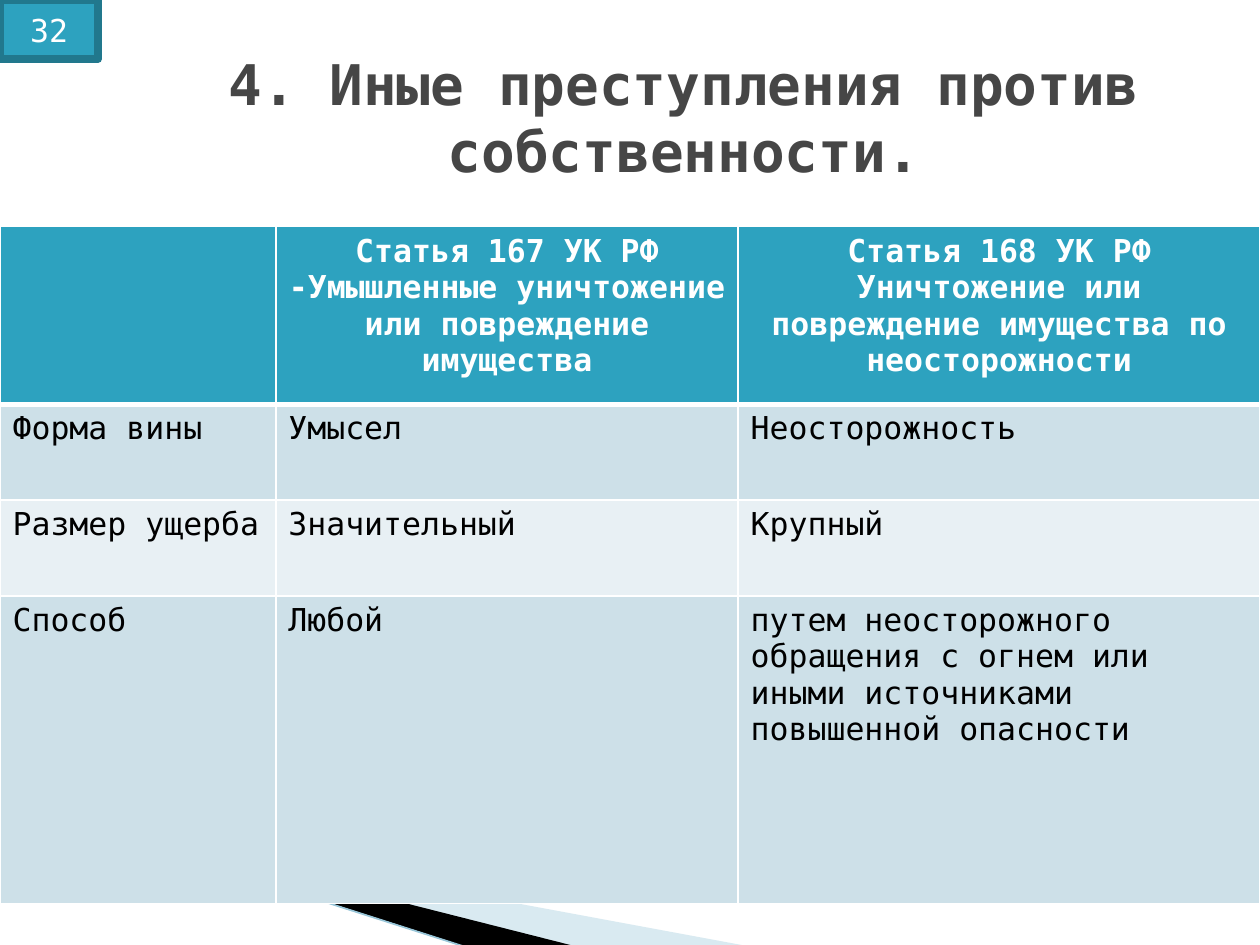
from dataclasses import dataclass

from lxml.etree import SubElement
from pptx import Presentation
from pptx.dml.color import RGBColor
from pptx.enum.shapes import MSO_CONNECTOR, MSO_SHAPE
from pptx.enum.text import MSO_ANCHOR, PP_ALIGN
from pptx.oxml.ns import qn
from pptx.util import Cm, Pt

FONT_NAME = "DejaVu Sans Mono"
WHITE = RGBColor(0xFF, 0xFF, 0xFF)
BLACK = RGBColor(0x00, 0x00, 0x00)
TEAL = RGBColor(0x2D, 0xA2, 0xBF)
DARK_TEAL = RGBColor(0x21, 0x78, 0x8D)
PALE_BLUE = RGBColor(0xA0, 0xCB, 0xDC)
LINE_BLUE = RGBColor(0x97, 0xC5, 0xD8)
TITLE_GREY = RGBColor(0x46, 0x46, 0x46)
BAND_DARK = RGBColor(0xCD, 0xE0, 0xE8)
BAND_LIGHT = RGBColor(0xE8, 0xF0, 0xF4)

COLUMN_WIDTHS = (5.56, 9.32, 10.52)
ROW_HEIGHTS = (3.58, 1.93, 1.93, 6.2)
ROWS = (
    ("",
     "Статья 167 УК РФ -Умышленные уничтожение или повреждение имущества",
     "Статья 168 УК РФ Уничтожение или повреждение имущества по неосторожности"),
    ("Форма вины", "Умысел", "Неосторожность"),
    ("Размер ущерба", "Значительный", "Крупный"),
    ("Способ", "Любой",
     "путем неосторожного обращения с огнем или иными источниками повышенной опасности"),
)


@dataclass(frozen=True)
class TextStyle:
    size: float
    color: RGBColor
    bold: bool = False
    alignment: PP_ALIGN = PP_ALIGN.CENTER


@dataclass(frozen=True)
class Wedge:
    points: tuple[tuple[float, float], ...]
    color: RGBColor
    opacity: int = 100


TITLE_STYLE = TextStyle(32, TITLE_GREY, True)
NUMBER_STYLE = TextStyle(18, WHITE)
HEADER_STYLE = TextStyle(18, WHITE, True)
BODY_STYLE = TextStyle(18, BLACK, alignment=PP_ALIGN.LEFT)

WEDGES = (
    Wedge(((1.4, 16.54), (15.11, 19.08), (11.58, 19.08), (1.4, 16.51)), PALE_BLUE, 40),
    Wedge(((1.35, 16.48), (11.61, 19.08), (9.45, 19.1), (1.37, 16.51)), BLACK),
)


def write_text(text_frame, text: str, style: TextStyle) -> None:
    paragraph = text_frame.paragraphs[0]
    paragraph.alignment = style.alignment
    run = paragraph.add_run()
    run.text = text
    run.font.name = FONT_NAME
    run.font.size = Pt(style.size)
    run.font.bold = style.bold
    run.font.color.rgb = style.color


def draw_wedge(slide, wedge: Wedge) -> None:
    first, *others = [(Cm(x), Cm(y)) for x, y in wedge.points]
    builder = slide.shapes.build_freeform(*first)
    builder.add_line_segments(others, close=True)
    shape = builder.convert_to_shape()
    shape.shadow.inherit = False
    shape.fill.solid()
    shape.fill.fore_color.rgb = wedge.color
    shape.line.fill.background()
    if wedge.opacity < 100:
        color = shape._element.spPr.find(qn("a:solidFill"))[0]
        SubElement(color, qn("a:alpha"), val=str(wedge.opacity * 1000))


def draw_edge_line(slide) -> None:
    connector = slide.shapes.add_connector(
        MSO_CONNECTOR.STRAIGHT, Cm(-0.03), Cm(16.08), Cm(9.42), Cm(19.1))
    connector.line.color.rgb = LINE_BLUE
    connector.line.width = Pt(0.95)
    SubElement(connector._element.spPr, qn("a:effectLst"))


def set_borders(cell, bottom_width: float) -> None:
    properties = cell._tc.get_or_add_tcPr()
    widths = {"lnL": 1, "lnR": 1, "lnT": 1, "lnB": bottom_width}
    for side, width in widths.items():
        line = SubElement(properties, qn(f"a:{side}"), w=str(Pt(width)))
        fill = SubElement(line, qn("a:solidFill"))
        SubElement(fill, qn("a:srgbClr"), val=str(WHITE))


def draw_table(slide) -> None:
    table = slide.shapes.add_table(
        len(ROWS), len(COLUMN_WIDTHS), Cm(0), Cm(4.57),
        Cm(sum(COLUMN_WIDTHS)), Cm(sum(ROW_HEIGHTS))).table
    for column, width in zip(table.columns, COLUMN_WIDTHS):
        column.width = Cm(width)
    for row, height in zip(table.rows, ROW_HEIGHTS):
        row.height = Cm(height)
    for row_index, texts in enumerate(ROWS):
        is_header = row_index == 0
        band = BAND_DARK if row_index % 2 else BAND_LIGHT
        for column_index, text in enumerate(texts):
            cell = table.cell(row_index, column_index)
            set_borders(cell, 3 if is_header else 1)
            cell.fill.solid()
            cell.fill.fore_color.rgb = TEAL if is_header else band
            if text:
                write_text(cell.text_frame, text, HEADER_STYLE if is_header else BODY_STYLE)


def draw_title(slide) -> None:
    title = slide.shapes.add_textbox(Cm(2.18), Cm(0.76), Cm(23.22), Cm(3.18))
    title.text_frame.word_wrap = True
    title.text_frame.vertical_anchor = MSO_ANCHOR.MIDDLE
    write_text(title.text_frame, "4. Иные преступления против собственности.", TITLE_STYLE)


def draw_slide_number(slide) -> None:
    badge = slide.shapes.add_shape(MSO_SHAPE.RECTANGLE, Cm(0), Cm(0), Cm(1.98), Cm(1.19))
    badge.shadow.inherit = False
    badge.fill.solid()
    badge.fill.fore_color.rgb = TEAL
    badge.line.color.rgb = DARK_TEAL
    badge.line.width = Pt(4.33)
    badge.text_frame.vertical_anchor = MSO_ANCHOR.MIDDLE
    write_text(badge.text_frame, "32", NUMBER_STYLE)


def main() -> None:
    presentation = Presentation()
    presentation.slide_width = Cm(25.4)
    presentation.slide_height = Cm(19.05)
    slide = presentation.slides.add_slide(presentation.slide_layouts[6])

    # Corner decoration
    for wedge in WEDGES:
        draw_wedge(slide, wedge)
    draw_edge_line(slide)

    # Content
    draw_table(slide)
    draw_title(slide)
    draw_slide_number(slide)

    presentation.save("out.pptx")


if __name__ == "__main__":
    main()
